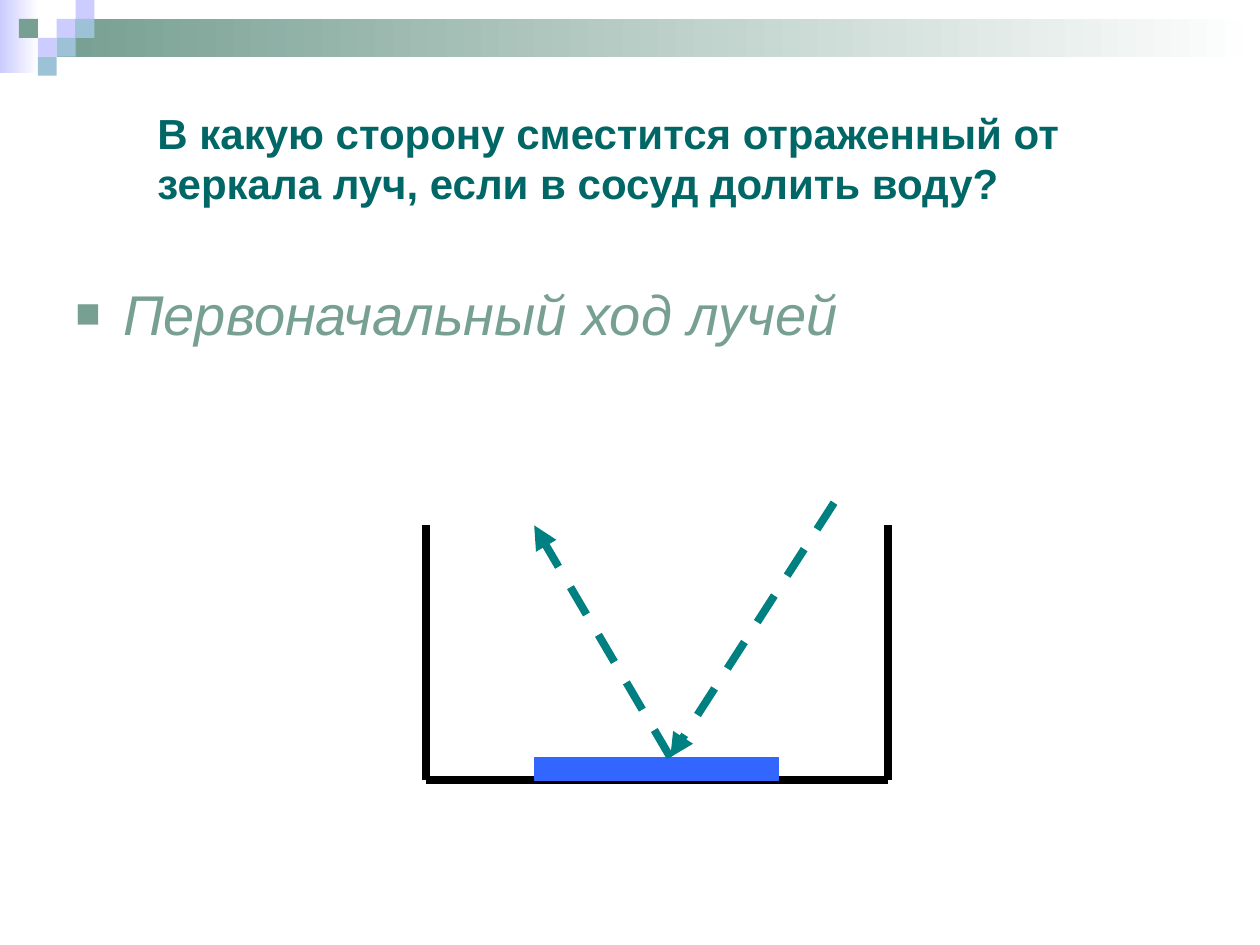
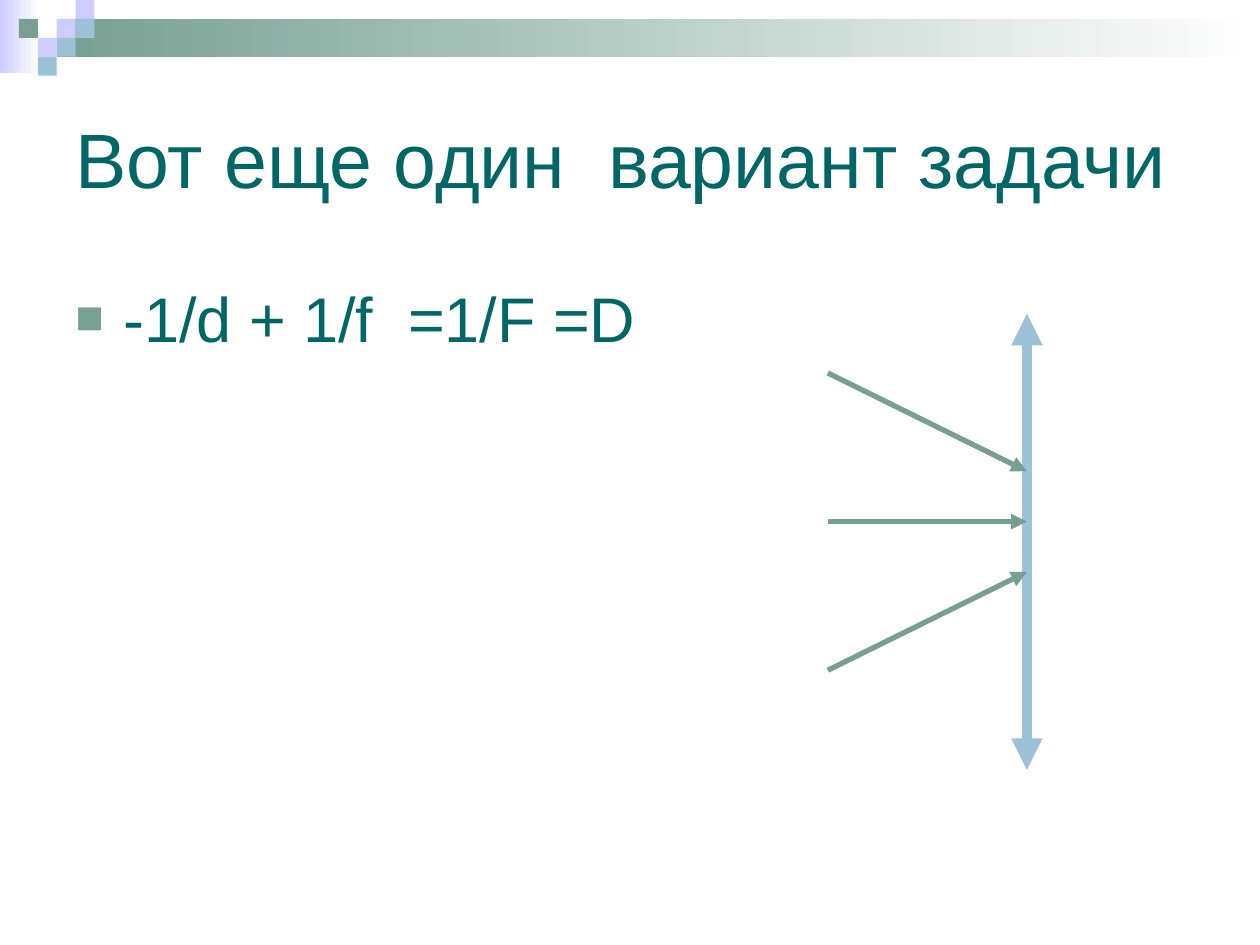
from dataclasses import dataclass
from typing import NamedTuple

from lxml.etree import SubElement
from pptx import Presentation
from pptx.dml.color import RGBColor
from pptx.enum.dml import MSO_LINE_DASH_STYLE as Dash
from pptx.enum.shapes import MSO_CONNECTOR as Connector, MSO_SHAPE as Shape
from pptx.enum.text import MSO_ANCHOR as Anchor, PP_ALIGN as Align
from pptx.oxml.ns import qn
from pptx.slide import Slide
from pptx.util import Inches, Pt


@dataclass(frozen=True)
class Theme:
    font: str = "Arial"
    white: str = "FFFFFF"
    black: str = "000000"
    lilac: str = "CCCCFF"
    sage: str = "779F92"
    sky: str = "9DC2D7"
    heading: str = "006666"
    ray: str = "008080"
    mirror: str = "3366FF"
    question_size: int = 24
    caption_size: int = 32
    formula_size: int = 36
    title_size: int = 44


class Area(NamedTuple):
    left: float
    top: float
    width: float
    height: float

    def lengths(self) -> list[Inches]:
        return [Inches(value) for value in self]


class Point(NamedTuple):
    x: float
    y: float


class Tile(NamedTuple):
    column: int
    row: int
    color: str


class Stroke(NamedTuple):
    color: str
    width: float
    dashed: bool = False
    head: bool = False
    tail: bool = False


THEME = Theme()
TITLE_AREA = Area(0.5, 0.5, 9, 1.5)
BODY_AREA = Area(0.5, 2.17, 9, 4.25)
BULLET_INDENT = 0.38
TILE_SIDE = 0.15
TILES = (
    Tile(3, 1, THEME.lilac),
    Tile(4, 0, THEME.lilac),
    Tile(4, 1, THEME.sky),
    Tile(2, 2, THEME.lilac),
    Tile(1, 1, THEME.sage),
    Tile(3, 2, THEME.sky),
    Tile(2, 3, THEME.sky),
)


def rgb(color: str) -> RGBColor:
    return RGBColor.from_string(color)


def add_block(page: Slide, area: Area, color: str, *, fade_to: str = "",
              outline: str = "") -> None:
    """Draw a rectangle, plain or fading from left to right."""
    block = page.shapes.add_shape(Shape.RECTANGLE, *area.lengths())
    block.shadow.inherit = False
    if fade_to:
        block.fill.gradient()
        block.fill.gradient_angle = 0
        for stop, shade in zip(block.fill.gradient_stops, (color, fade_to)):
            stop.color.rgb = rgb(shade)
    else:
        block.fill.solid()
        block.fill.fore_color.rgb = rgb(color)
    if outline:
        block.line.color.rgb = rgb(outline)
        block.line.width = Pt(0.75)
    else:
        block.line.fill.background()


def add_line(page: Slide, start: Point, end: Point, stroke: Stroke) -> None:
    ends = [Inches(value) for value in (*start, *end)]
    connector = page.shapes.add_connector(Connector.STRAIGHT, *ends)
    connector.line.color.rgb = rgb(stroke.color)
    connector.line.width = Pt(stroke.width)
    if stroke.dashed:
        connector.line.dash_style = Dash.DASH
    outline = connector.line._get_or_add_ln()
    for tag, wanted in (("a:headEnd", stroke.head), ("a:tailEnd", stroke.tail)):
        if wanted:
            SubElement(outline, qn(tag), type="triangle")
    SubElement(connector._element.spPr, qn("a:effectLst"))


def add_bullet(para) -> None:
    properties = para._p.get_or_add_pPr()
    properties.set("marL", str(Inches(BULLET_INDENT)))
    properties.set("indent", str(-Inches(BULLET_INDENT)))
    spacing = SubElement(properties, qn("a:spcBef"))
    SubElement(spacing, qn("a:spcPct"), val="20000")
    color = SubElement(properties, qn("a:buClr"))
    SubElement(color, qn("a:srgbClr"), val=THEME.sage)
    SubElement(properties, qn("a:buSzPct"), val="75000")
    SubElement(properties, qn("a:buFont"), typeface=THEME.font)
    SubElement(properties, qn("a:buChar"), char="■")


def add_text(page: Slide, area: Area, text: str, *, size: int,
             color: str = THEME.heading, bold: bool = False,
             italic: bool = False, bullet: bool = False,
             anchor: Anchor = Anchor.TOP, margin: float = 0.1) -> None:
    """Add one paragraph; a vertical tab in the text breaks the line."""
    box = page.shapes.add_textbox(*area.lengths())
    frame = box.text_frame
    frame.word_wrap = True
    frame.vertical_anchor = anchor
    frame.margin_left = Inches(margin)
    para = frame.paragraphs[0]
    para.text = text
    para.alignment = Align.LEFT
    if bullet:
        add_bullet(para)
    for span in para.runs:
        span.font.name = THEME.font
        span.font.size = Pt(size)
        span.font.color.rgb = rgb(color)
        span.font.bold = bold
        span.font.italic = italic


def add_page(deck) -> Slide:
    """Add a blank slide with the shared band and tiles along the top."""
    page = deck.slides.add_slide(deck.slide_layouts[6])
    page.background.fill.solid()
    page.background.fill.fore_color.rgb = rgb(THEME.white)
    add_block(page, Area(0, 0, 0.31, 0.58), THEME.lilac, fade_to=THEME.white)
    add_block(page, Area(0.45, 0.15, 9.55, 0.3), THEME.sage, fade_to=THEME.white)
    for tile in TILES:
        area = Area(tile.column * TILE_SIDE, tile.row * TILE_SIDE,
                    TILE_SIDE, TILE_SIDE)
        add_block(page, area, tile.color)
    return page


def add_mirror_page(deck) -> None:
    page = add_page(deck)
    add_text(page, TITLE_AREA,
             "В какую сторону сместится отраженный от \vзеркала луч, если в сосуд долить воду?",
             size=THEME.question_size, bold=True, anchor=Anchor.MIDDLE, margin=0.75)
    add_text(page, BODY_AREA, "Первоначальный ход лучей", size=THEME.caption_size,
             color=THEME.sage, italic=True, bullet=True)

    left, right, rim, bottom = 3.38, 7.05, 4.17, 6.19
    wall = Stroke(THEME.black, 4.5)
    add_line(page, Point(left, bottom), Point(right, bottom), wall)
    for side in (left, right):
        add_line(page, Point(side, bottom), Point(side, rim), wall)

    mirror = Area(4.24, 6.01, 1.94, 0.18)
    add_block(page, mirror, THEME.mirror, outline=THEME.mirror)
    reflection = Point(5.32, mirror.top)
    ray = Stroke(THEME.ray, 4.5, dashed=True, tail=True)
    add_line(page, Point(6.62, 3.99), reflection, ray)
    add_line(page, reflection, Point(mirror.left, rim), ray)


def add_lens_page(deck) -> None:
    page = add_page(deck)
    add_text(page, TITLE_AREA, "Вот еще один  вариант задачи",
             size=THEME.title_size, anchor=Anchor.MIDDLE)
    add_text(page, BODY_AREA, "-1/d + 1/f  =1/F =D", size=THEME.formula_size,
             bullet=True)

    source_x, lens_x, axis_y = 6.57, 8.15, 4.14
    add_line(page, Point(lens_x, 6.11), Point(lens_x, 2.49),
             Stroke(THEME.sky, 6, head=True, tail=True))
    ray = Stroke(THEME.sage, 3, tail=True)
    for side in (-1, 1, 0):
        add_line(page, Point(source_x, axis_y + side * 1.18),
                 Point(lens_x, axis_y + side * 0.4), ray)


def main() -> None:
    deck = Presentation()
    deck.slide_width, deck.slide_height = Inches(10), Inches(7.5)
    add_mirror_page(deck)
    add_lens_page(deck)
    deck.save("out.pptx")


if __name__ == "__main__":
    main()
